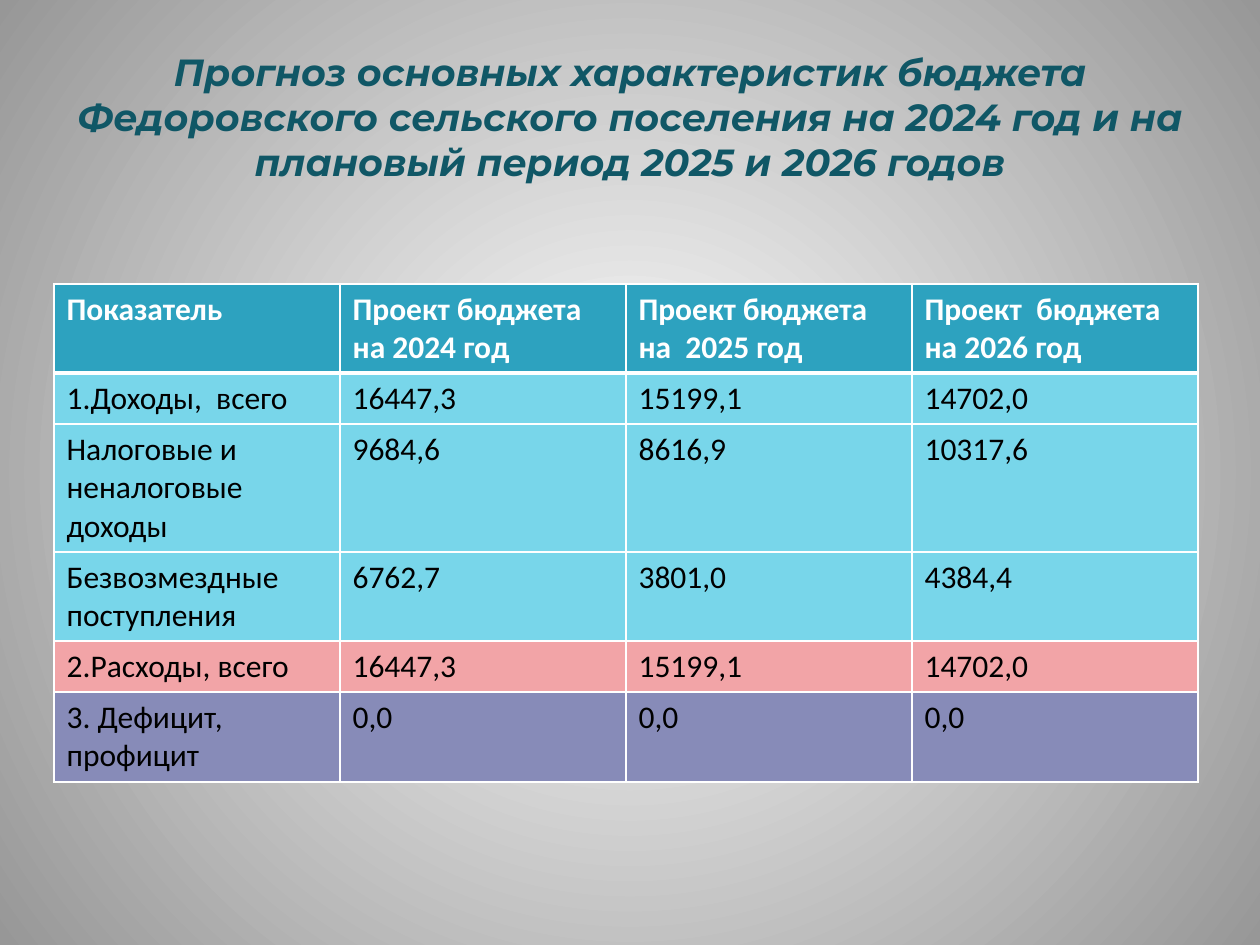
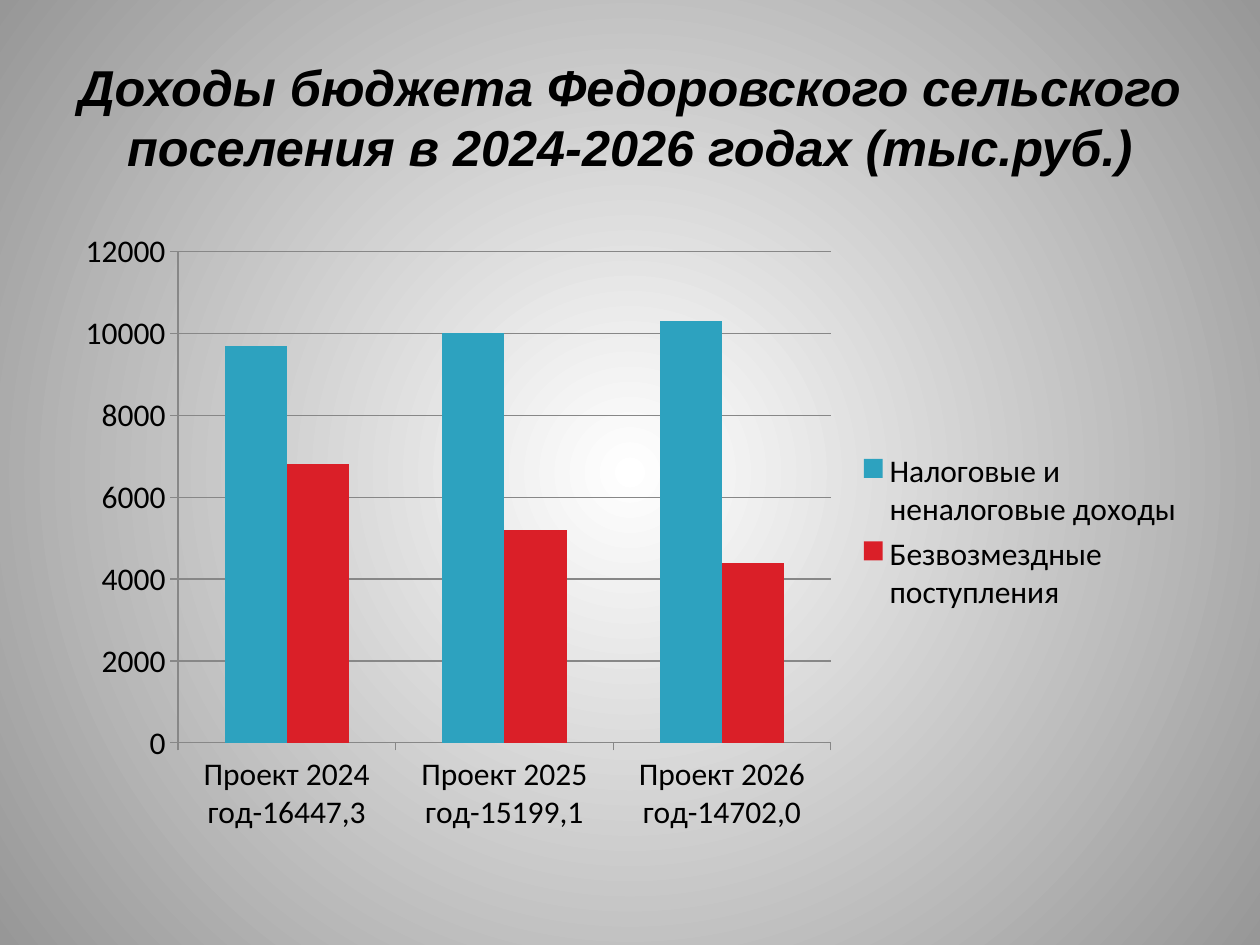
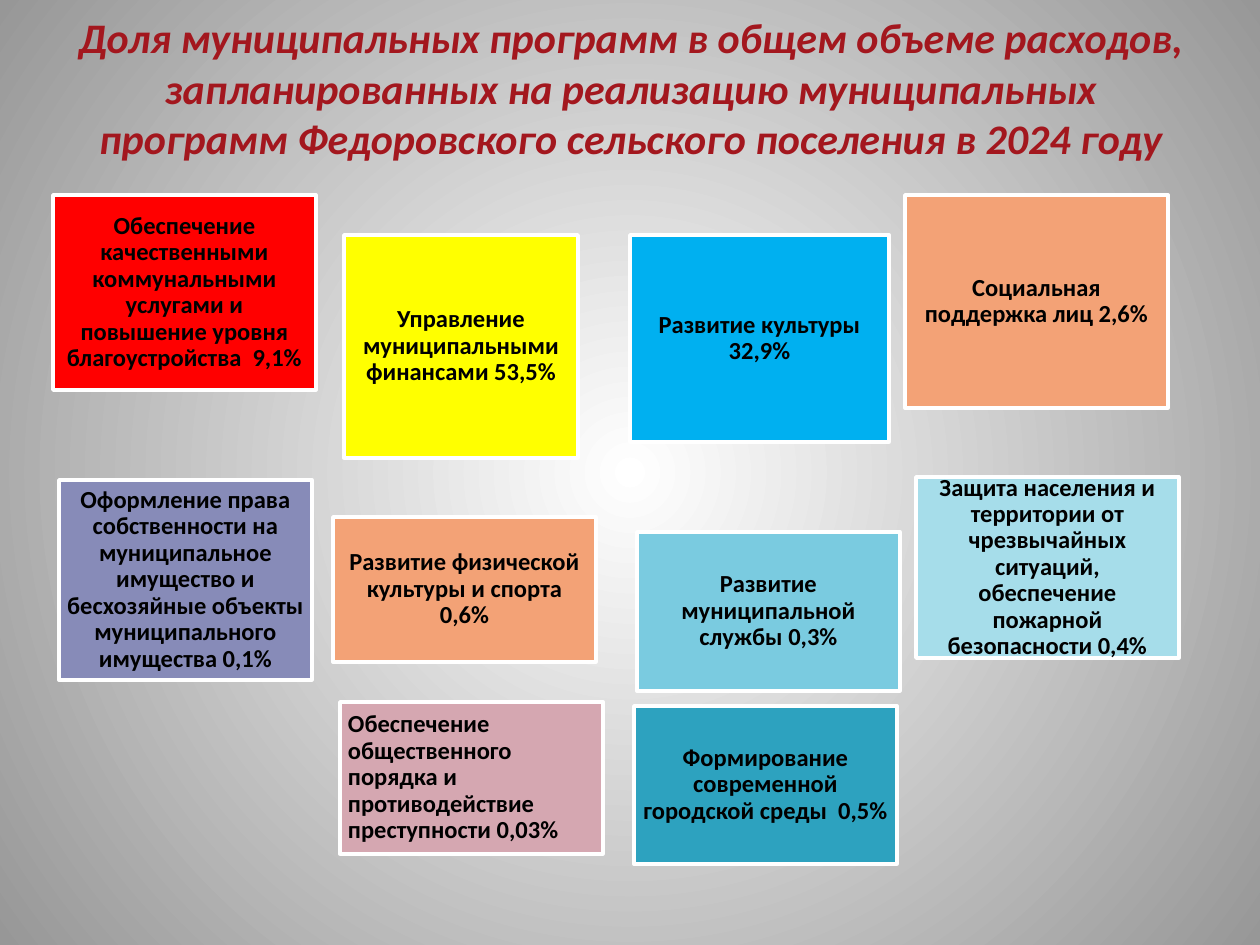
from lxml import etree
from pptx import Presentation
from pptx import util as u
from pptx.chart import data
from pptx.dml import color
from pptx.enum import chart as ch, shapes, text
from pptx.oxml import ns

SCALE = 914400 / 126
COLORS = {
    "white": "FFFFFF", "black": "000000", "edge": "979797", "grid": "878787",
    "teal": "2DA2BF", "deep_teal": "105766", "aqua": "78D6EA", "sky": "7ACBE0",
    "ice": "A6DDEA", "pink": "F2A4A7", "rose": "D5A7B1", "violet": "878BB8",
    "crimson": "DA1F28", "dark_red": "A3171E", "red": "FF0000",
    "yellow": "FFFF00", "blue": "00B0F0", "peach": "F3A276",
}
FONT = "Calibri"
CENTER = text.PP_ALIGN.CENTER
LEFT = text.PP_ALIGN.LEFT


def rgb(name):
    return color.RGBColor.from_string(COLORS[name])


def px(n):
    return u.Emu(round(n * SCALE))


def write(tf, words, font=FONT, size=18, fill="black", bold=False,
          italic=False, align=LEFT, spacing=None):
    tf.word_wrap = True
    p = tf.paragraphs[0]
    p.alignment = align
    if spacing:
        p.line_spacing = spacing
    r = p.add_run()
    r.text = words
    f = r.font
    f.name, f.size, f.bold, f.italic = font, u.Pt(size), bold, italic
    f.color.rgb = rgb(fill)


class Deck:
    def __init__(self):
        self.prs = Presentation()
        self.prs.slide_width, self.prs.slide_height = px(1260), px(945)
        self.s = None
        self.background()

    def background(self):
        master = self.prs.slide_master
        fill = master.background.fill
        fill.gradient()
        for stop, name in zip(fill.gradient_stops, ("white", "edge")):
            stop.color.rgb = rgb(name)
        grad = master.element.find(".//" + ns.qn("a:gradFill"))
        for lin in grad.findall(ns.qn("a:lin")):
            grad.remove(lin)
        circle = etree.SubElement(grad, ns.qn("a:path"), path="circle")
        etree.SubElement(circle, ns.qn("a:fillToRect"),
                         dict.fromkeys("ltrb", "50000"))

    def slide(self):
        self.s = self.prs.slides.add_slide(self.prs.slide_layouts[6])

    def title(self, words, x=63, y=38, w=1134, h=157, **style):
        tf = self.s.shapes.add_textbox(px(x), px(y), px(w), px(h)).text_frame
        tf.vertical_anchor = text.MSO_ANCHOR.MIDDLE
        write(tf, words, bold=True, italic=True, align=CENTER, **style)

    def box(self, x, y, w, h, fill, words, align=CENTER):
        sp = self.s.shapes.add_shape(shapes.MSO_SHAPE.RECTANGLE,
                                     px(x), px(y), px(w), px(h))
        sp.shadow.inherit = False
        sp.fill.solid()
        sp.fill.fore_color.rgb = rgb(fill)
        sp.line.color.rgb = rgb("white")
        sp.line.width = u.Pt(2)
        tf = sp.text_frame
        tf.vertical_anchor = text.MSO_ANCHOR.MIDDLE
        tf.margin_left = tf.margin_right = px(8)
        tf.margin_top = tf.margin_bottom = px(8)
        write(tf, words, size=14, bold=True, align=align, spacing=0.9)

    def borders(self, cell, top, bottom):
        pr = cell._tc.get_or_add_tcPr()
        sides = (("L", 1), ("R", 1), ("T", top), ("B", bottom))
        for i, (side, width) in enumerate(sides):
            ln = etree.Element(ns.qn("a:ln" + side), w=str(u.Pt(width)))
            solid = etree.SubElement(ln, ns.qn("a:solidFill"))
            etree.SubElement(solid, ns.qn("a:srgbClr"), val=COLORS["white"])
            pr.insert(i, ln)

    def table(self, x, y, col_width, heights, fills, rows):
        count = len(rows[0])
        frame = self.s.shapes.add_table(len(rows), count, px(x), px(y),
                                        px(col_width * count), px(sum(heights)))
        tbl = frame.table
        for col in tbl.columns:
            col.width = px(col_width)
        for i, (row, height, fill) in enumerate(zip(rows, heights, fills)):
            tbl.rows[i].height = px(height)
            for j, words in enumerate(row):
                cell = tbl.cell(i, j)
                cell.fill.solid()
                cell.fill.fore_color.rgb = rgb(fill)
                write(cell.text_frame, words, bold=i == 0,
                      fill="black" if i else "white")
                self.borders(cell, 3 if i == 1 else 1, 1 if i else 3)

    def columns(self, x, y, w, h, cats, series):
        cd = data.CategoryChartData()
        cd.categories = cats
        for name, values, _ in series:
            cd.add_series(name, values)
        chart = self.s.shapes.add_chart(ch.XL_CHART_TYPE.COLUMN_CLUSTERED,
                                        px(x), px(y), px(w), px(h), cd).chart
        f = chart.font
        f.name, f.size, f.color.rgb = FONT, u.Pt(18), rgb("black")
        chart.has_title = False
        chart.has_legend = True
        chart.legend.position = ch.XL_LEGEND_POSITION.RIGHT
        chart.legend.include_in_layout = False
        plot = chart.plots[0]
        plot.gap_width = 150
        plot.vary_by_categories = False
        for ser, (_, _, fill) in zip(plot.series, series):
            ser.format.fill.solid()
            ser.format.fill.fore_color.rgb = rgb(fill)
        value = chart.value_axis
        value.has_major_gridlines = True
        value.tick_labels.number_format = "General"
        value.tick_labels.number_format_is_linked = False
        for axis in (value, chart.category_axis):
            axis.major_tick_mark = ch.XL_TICK_MARK.OUTSIDE
            axis.format.line.color.rgb = rgb("grid")
        value.major_gridlines.format.line.color.rgb = rgb("grid")


def main():
    deck = Deck()

    deck.slide()
    deck.title("Прогноз основных характеристик бюджета Федоровского сельского "
               "поселения на 2024 год и на плановый период 2025 и 2026 годов",
               font="Montserrat", size=21.6, fill="deep_teal")
    deck.table(
        54, 284, 286, (89, 51, 128, 89, 51, 90),
        ("teal", "aqua", "aqua", "aqua", "pink", "violet"),
        (("Показатель", "Проект бюджета на 2024 год",
          "Проект бюджета на  2025 год", "Проект  бюджета на 2026 год"),
         ("1.Доходы,  всего", "16447,3", "15199,1", "14702,0"),
         ("Налоговые и неналоговые доходы", "9684,6", "8616,9", "10317,6"),
         ("Безвозмездные поступления", "6762,7", "3801,0", "4384,4"),
         ("2.Расходы, всего", "16447,3", "15199,1", "14702,0"),
         ("3. Дефицит, профицит", "0,0", "0,0", "0,0")))

    deck.slide()
    deck.title("Доходы бюджета Федоровского сельского поселения "
               "в 2024-2026 годах (тыс.руб.)", font="Arial", size=28.8)
    deck.columns(
        63, 220, 1134, 624,
        ("Проект 2024 год-16447,3", "Проект 2025 год-15199,1",
         "Проект 2026 год-14702,0"),
        (("Налоговые и неналоговые доходы", (9700, 10000, 10300), "teal"),
         ("Безвозмездные поступления", (6800, 5200, 4400), "crimson")))

    deck.slide()
    deck.title("Доля муниципальных программ в общем объеме расходов, "
               "запланированных на реализацию муниципальных программ "
               "Федоровского сельского поселения в 2024 году",
               x=64, y=0, h=175, size=24, fill="dark_red")
    programs = (
        (53, 195, 263, 195, "red", "Обеспечение качественными коммунальными "
         "услугами и повышение уровня благоустройства  9,1%"),
        (344, 235, 234, 223, "yellow",
         "Управление муниципальными финансами 53,5%"),
        (630, 235, 259, 207, "blue", "Развитие культуры 32,9%"),
        (905, 195, 263, 213, "peach", "Социальная поддержка лиц 2,6%"),
        (59, 480, 253, 200, "violet", "Оформление права собственности на "
         "муниципальное имущество и бесхозяйные объекты муниципального "
         "имущества 0,1%"),
        (333, 517, 263, 145, "peach",
         "Развитие физической культуры и спорта 0,6%"),
        (637, 532, 263, 159, "sky", "Развитие муниципальной службы 0,3%"),
        (916, 477, 263, 181, "ice", "Защита населения и территории от "
         "чрезвычайных ситуаций, обеспечение пожарной безопасности 0,4%"),
        (340, 702, 263, 152, "rose", "Обеспечение общественного порядка и "
         "противодействие преступности 0,03%", LEFT),
        (634, 706, 263, 158, "teal",
         "Формирование современной городской среды  0,5%"),
    )
    for program in programs:
        deck.box(*program)

    deck.prs.save("out.pptx")


if __name__ == "__main__":
    main()
